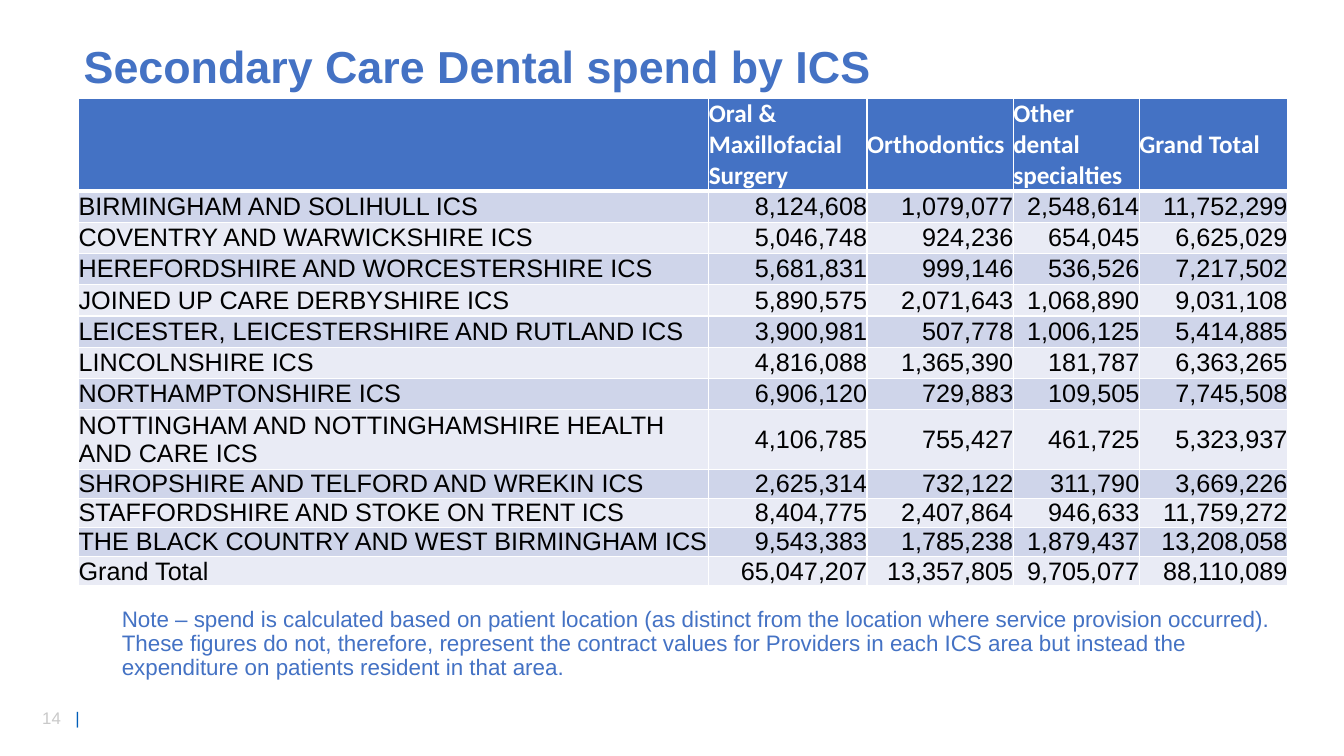
"""Build the slide on secondary care dental spend by ICS."""
from pptx import Presentation
from pptx.dml.color import RGBColor
from pptx.enum.text import MSO_ANCHOR as Anchor, PP_ALIGN as Align
from pptx.oxml import parse_xml
from pptx.oxml.ns import nsdecls
from pptx.util import Inches, Pt

TITLE = "Secondary Care Dental spend by ICS"
HEADINGS = ("", "Oral & Maxillofacial Surgery", "Orthodontics",
            "Other dental specialties", "Grand Total")
SPEND = [
    ("BIRMINGHAM AND SOLIHULL ICS", 8124608, 1079077, 2548614, 11752299),
    ("COVENTRY AND WARWICKSHIRE ICS", 5046748, 924236, 654045, 6625029),
    ("HEREFORDSHIRE AND WORCESTERSHIRE ICS", 5681831, 999146, 536526, 7217502),
    ("JOINED UP CARE DERBYSHIRE ICS", 5890575, 2071643, 1068890, 9031108),
    ("LEICESTER, LEICESTERSHIRE AND RUTLAND ICS", 3900981, 507778, 1006125, 5414885),
    ("LINCOLNSHIRE ICS", 4816088, 1365390, 181787, 6363265),
    ("NORTHAMPTONSHIRE ICS", 6906120, 729883, 109505, 7745508),
    ("NOTTINGHAM AND NOTTINGHAMSHIRE HEALTH AND CARE ICS", 4106785, 755427, 461725, 5323937),
    ("SHROPSHIRE AND TELFORD AND WREKIN ICS", 2625314, 732122, 311790, 3669226),
    ("STAFFORDSHIRE AND STOKE ON TRENT ICS", 8404775, 2407864, 946633, 11759272),
    ("THE BLACK COUNTRY AND WEST BIRMINGHAM ICS", 9543383, 1785238, 1879437, 13208058),
    ("Grand Total", 65047207, 13357805, 9705077, 88110089),
]
NOTE = ("Note – spend is calculated based on patient location (as distinct from the location "
        "where service provision occurred). These figures do not, therefore, represent the "
        "contract values for Providers in each ICS area but instead the expenditure on "
        "patients resident in that area.")
PAGE_NUMBER = "14"

COLORS = {"blue": "4472C4", "odd": "CFD5EA", "even": "E9EBF5", "white": "FFFFFF",
          "black": "000000", "grey": "C9C9C9", "bar": "005EB8"}
COLUMN_WIDTHS = (6.25, 1.57, 1.45, 1.25, 1.47)
ROW_HEIGHTS = [0.9] + [0.31] * 7 + [0.59] + [0.29] * 4


def write(paragraph, text, size=18, color="black", bold=False, font="Arial",
          align=Align.LEFT, spacing=None):
    """Add a formatted run to a paragraph."""
    paragraph.alignment = align
    if spacing:
        paragraph.line_spacing = spacing
    run = paragraph.add_run()
    run.text = text
    run.font.size, run.font.bold, run.font.name = Pt(size), bold, font
    run.font.color.rgb = RGBColor.from_string(COLORS[color])


def add_box(slide, left, top, width, height):
    """Add a wrapping text box and return its first paragraph."""
    frame = slide.shapes.add_textbox(*map(Inches, (left, top, width, height))).text_frame
    frame.word_wrap = True
    return frame.paragraphs[0]


def style_cell(cell, fill, bottom=1):
    """Fill a cell, drop its margins and rule it in white."""
    cell.vertical_anchor = Anchor.MIDDLE
    cell.margin_left = cell.margin_right = cell.margin_top = cell.margin_bottom = 0
    properties = cell._tc.get_or_add_tcPr()
    for side, points in (("L", 1), ("R", 1), ("T", 1), ("B", bottom)):
        properties.append(parse_xml(
            f'<a:ln{side} {nsdecls("a")} w="{Pt(points)}"><a:solidFill>'
            f'<a:srgbClr val="{COLORS["white"]}"/></a:solidFill></a:ln{side}>'))
    cell.fill.solid()
    cell.fill.fore_color.rgb = RGBColor.from_string(COLORS[fill])


def add_spend_table(slide):
    """Add the table of spend by ICS and specialty."""
    table = slide.shapes.add_table(
        len(ROW_HEIGHTS), len(COLUMN_WIDTHS), Inches(0.78), Inches(0.98),
        Inches(sum(COLUMN_WIDTHS)), Inches(sum(ROW_HEIGHTS))).table
    for column, width in zip(table.columns, COLUMN_WIDTHS):
        column.width = Inches(width)
    for row, height in zip(table.rows, ROW_HEIGHTS):
        row.height = Inches(height)

    for c, heading in enumerate(HEADINGS):
        cell = table.cell(0, c)
        style_cell(cell, "blue", bottom=3)
        if heading:
            write(cell.text_frame.paragraphs[0], heading, color="white", bold=True,
                  font="Calibri")
    for r, (area, *amounts) in enumerate(SPEND, start=1):
        for c, text in enumerate([area] + [f"{amount:,}" for amount in amounts]):
            cell = table.cell(r, c)
            style_cell(cell, "odd" if r % 2 else "even", bottom=1)
            if r == 1:
                cell._tc.tcPr.find("{*}lnT").set("w", str(Pt(3)))
            write(cell.text_frame.paragraphs[0], text, align=Align.RIGHT if c else Align.LEFT)


def main():
    """Assemble and save the slide."""
    deck = Presentation()
    deck.slide_width, deck.slide_height = Inches(13.33), Inches(7.5)
    slide = deck.slides.add_slide(deck.slide_layouts[5])

    title = slide.shapes.title
    title.left, title.top, title.width, title.height = map(Inches, (0.73, 0.38, 9.39, 0.6))
    title.text_frame.vertical_anchor = Anchor.MIDDLE
    write(title.text_frame.paragraphs[0], TITLE, size=32, color="blue", bold=True, spacing=0.9)

    add_spend_table(slide)
    write(add_box(slide, 1.11, 5.98, 11.71, 1.02), NOTE, size=16, color="blue", spacing=0.9)

    footer = add_box(slide, 0.32, 6.97, 0.71, 0.3)
    footer._p.get_or_add_pPr().append(parse_xml(
        f'<a:tabLst {nsdecls("a")}><a:tab pos="{Inches(0.33)}" algn="l"/></a:tabLst>'))
    write(footer, PAGE_NUMBER + "\t", size=12, color="grey")
    write(footer, "|", size=12, color="bar")

    deck.save("out.pptx")


if __name__ == "__main__":
    main()
